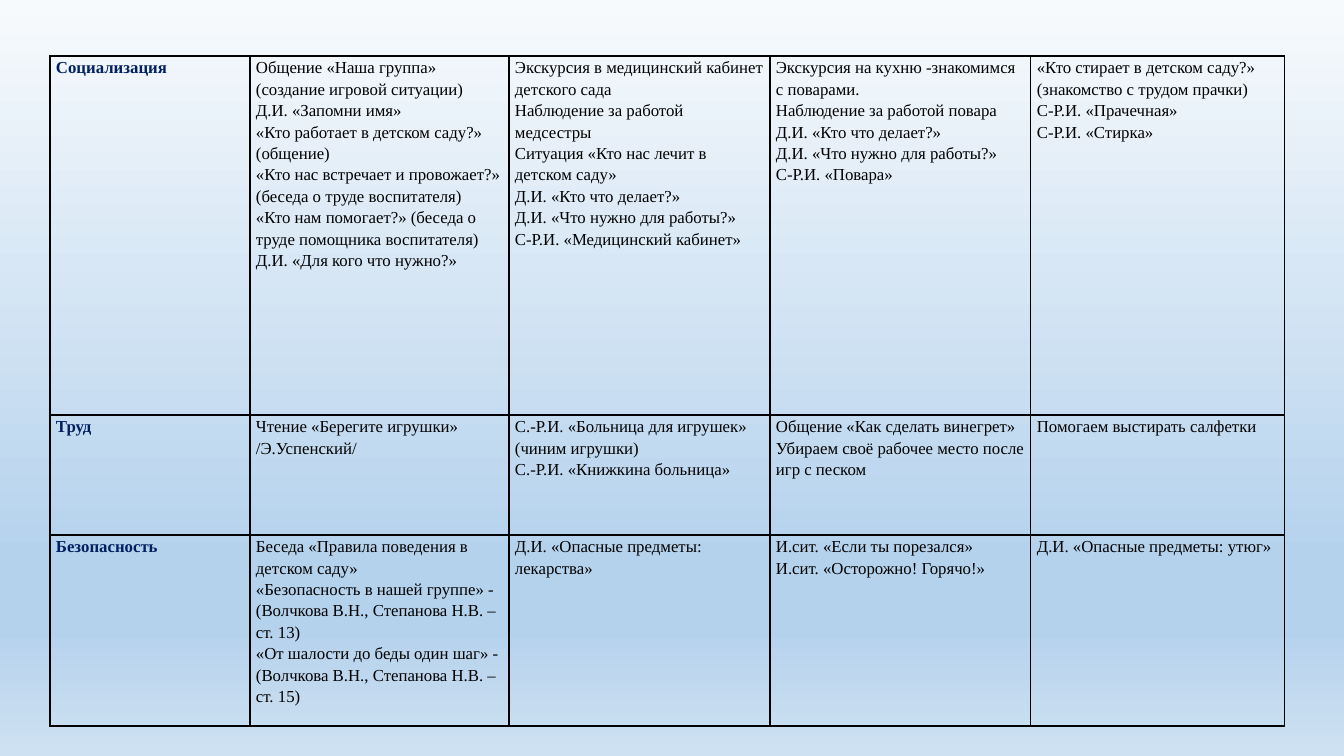
from lxml.etree import SubElement
from pptx import Presentation
from pptx.dml.color import RGBColor
from pptx.oxml.ns import qn
from pptx.util import Pt

EMU_PER_PX = 914400 / 100.8
BLACK = RGBColor(0x00, 0x00, 0x00)
NAVY = RGBColor(0x00, 0x20, 0x60)
ICE = RGBColor(0xF7, 0xFA, 0xFD)
SKY = RGBColor(0xB5, 0xD2, 0xEC)
MIST = RGBColor(0xCE, 0xE1, 0xF2)

BACKGROUND_STOPS = [(0, ICE), (74, SKY), (83, SKY), (100, MIST)]
COLUMN_WIDTHS = [200, 259, 261, 261, 254]
ROW_HEIGHTS = [359, 120, 191]

ACTIVITIES = [
    [
        ["Социализация"],
        ["Общение «Наша группа» (создание игровой ситуации)",
         "Д.И. «Запомни имя»",
         "«Кто работает в детском саду?» (общение)",
         "«Кто нас встречает и провожает?» (беседа о труде воспитателя)",
         "«Кто нам помогает?» (беседа о труде помощника воспитателя)",
         "Д.И. «Для кого что нужно?»"],
        ["Экскурсия в медицинский кабинет детского сада",
         "Наблюдение за работой медсестры",
         "Ситуация «Кто нас лечит в детском саду»",
         "Д.И. «Кто что делает?»",
         "Д.И. «Что нужно для работы?»",
         "С-Р.И. «Медицинский кабинет»"],
        ["Экскурсия на кухню -знакомимся с поварами.",
         "Наблюдение за работой повара",
         "Д.И. «Кто что делает?»",
         "Д.И. «Что нужно для работы?»",
         "С-Р.И. «Повара»"],
        ["«Кто стирает в детском саду?»",
         "(знакомство с трудом прачки)",
         "С-Р.И. «Прачечная»",
         "С-Р.И. «Стирка»"],
    ],
    [
        ["Труд"],
        ["Чтение «Берегите игрушки» /Э.Успенский/"],
        ["С.-Р.И. «Больница для игрушек» (чиним игрушки)",
         "С.-Р.И. «Книжкина больница»"],
        ["Общение «Как сделать винегрет»",
         "Убираем своё рабочее место после игр с песком"],
        ["Помогаем выстирать салфетки"],
    ],
    [
        ["Безопасность"],
        ["Беседа «Правила поведения в детском саду»",
         "«Безопасность в нашей группе» - (Волчкова В.Н., Степанова Н.В. – ст. 13)",
         "«От шалости до беды один шаг» - (Волчкова В.Н., Степанова Н.В. – ст. 15)"],
        ["Д.И. «Опасные предметы: лекарства»"],
        ["И.сит. «Если ты порезался»",
         "И.сит. «Осторожно! Горячо!»"],
        ["Д.И. «Опасные предметы: утюг»"],
    ],
]


def px(length):
    return round(length * EMU_PER_PX)


class PlanSlide:
    font_name = "Times New Roman"
    font_size = Pt(12)
    line_spacing = 1.15
    cell_inset = 6
    border_width = Pt(1)

    def __init__(self, deck):
        self.page = deck.slides.add_slide(deck.slide_layouts[6])

    def background(self, stops):
        fill = self.page.background.fill
        fill.gradient()
        fill.gradient_angle = 270
        stop_list = self.page.background._cSld.find(".//" + qn("a:gsLst"))
        for old_stop in list(stop_list):
            stop_list.remove(old_stop)
        for percent, color in stops:
            stop = SubElement(stop_list, qn("a:gs"), pos=str(percent * 1000))
            SubElement(stop, qn("a:srgbClr"), val=str(color))

    def table(self, left, top, widths, heights, rows):
        frame = self.page.shapes.add_table(
            len(heights), len(widths), px(left), px(top),
            px(sum(widths)), px(sum(heights)))
        table = frame.table
        table.first_row = table.horz_banding = False
        for column, width in zip(table.columns, widths):
            column.width = px(width)
        for row, height in zip(table.rows, heights):
            row.height = px(height)
        for row_index, row in enumerate(rows):
            for column_index, lines in enumerate(row):
                self.cell(table.cell(row_index, column_index), lines,
                          is_heading=column_index == 0)

    def cell(self, cell, lines, is_heading):
        cell.margin_left = cell.margin_right = px(self.cell_inset)
        cell.margin_top = cell.margin_bottom = 0
        cell.text_frame.text = "\n".join(lines)
        for para in cell.text_frame.paragraphs:
            para.line_spacing = self.line_spacing
            para.font.name = self.font_name
            para.font.size = self.font_size
            para.font.bold = is_heading
            para.font.color.rgb = NAVY if is_heading else BLACK
        self.borders(cell)
        cell.fill.background()

    def borders(self, cell):
        properties = cell._tc.get_or_add_tcPr()
        for side in ("a:lnL", "a:lnR", "a:lnT", "a:lnB"):
            line = SubElement(properties, qn(side), w=str(self.border_width))
            solid = SubElement(line, qn("a:solidFill"))
            SubElement(solid, qn("a:srgbClr"), val=str(BLACK))


def main():
    deck = Presentation()
    deck.slide_width, deck.slide_height = px(1344), px(756)
    plan = PlanSlide(deck)
    plan.background(BACKGROUND_STOPS)
    plan.table(50, 56, COLUMN_WIDTHS, ROW_HEIGHTS, ACTIVITIES)
    deck.save("out.pptx")


if __name__ == "__main__":
    main()
